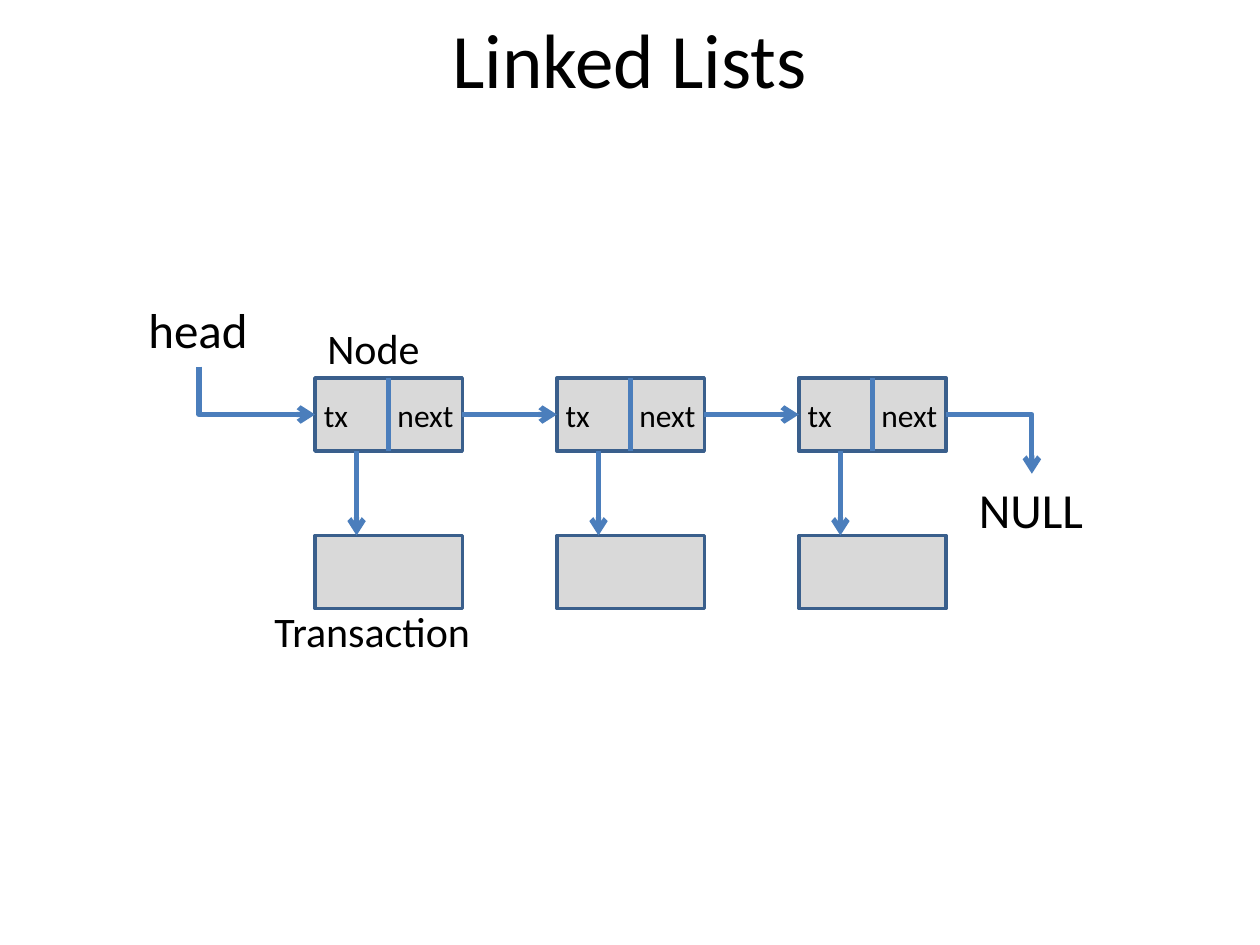
import pptx
import pptx.dml.color
import pptx.enum.shapes
import pptx.enum.text
import pptx.oxml.ns
import pptx.util
from lxml import etree

Inches = pptx.util.Inches
Anchor = pptx.enum.text.MSO_ANCHOR
Align = pptx.enum.text.PP_ALIGN
Connector = pptx.enum.shapes.MSO_CONNECTOR
qn = pptx.oxml.ns.qn

TOP, LEFT, BOTTOM, RIGHT = range(4)


def color(hex_string):
    return pptx.dml.color.RGBColor.from_string(hex_string)


def write(frame, text, size=24, align=Align.LEFT, anchor=Anchor.TOP, wrap=True, tab=None):
    """Put one formatted paragraph in the frame; tab is a stop in inches."""
    frame.word_wrap = wrap
    frame.vertical_anchor = anchor
    paragraph = frame.paragraphs[0]
    paragraph.alignment = align
    if tab:
        stops = etree.SubElement(paragraph._p.get_or_add_pPr(), qn("a:tabLst"))
        etree.SubElement(stops, qn("a:tab"), pos=str(Inches(tab)), algn="l")
    run = paragraph.add_run()
    run.text = text
    run.font.size = pptx.util.Pt(size)
    run.font.name = "Calibri"
    run.font.color.rgb = color("000000")


class Diagram:
    """Holds the style and the slide being drawn."""
    fill = "D9D9D9"
    border = "3A5F8C"
    link = "4B7EBC"

    def __init__(self, slide):
        self.slide = slide

    def title(self, text):
        heading = self.slide.shapes.title
        heading.left, heading.top = Inches(0), Inches(0)
        heading.width, heading.height = Inches(10), Inches(0.92)
        write(heading.text_frame, text, size=44, align=Align.CENTER, anchor=Anchor.MIDDLE)

    def label(self, text, left, top, width, height, size=24):
        box = self.slide.shapes.add_textbox(*map(Inches, (left, top, width, height)))
        box.text_frame.auto_size = pptx.enum.text.MSO_AUTO_SIZE.SHAPE_TO_FIT_TEXT
        write(box.text_frame, text, size=size, wrap=False)

    def box(self, left, top, width, height):
        rect = self.slide.shapes.add_shape(
            pptx.enum.shapes.MSO_SHAPE.RECTANGLE, *map(Inches, (left, top, width, height)))
        rect.shadow.inherit = False
        rect.fill.solid()
        rect.fill.fore_color.rgb = color(self.fill)
        rect.line.color.rgb = color(self.border)
        rect.line.width = pptx.util.Pt(2)
        return rect

    def node(self, left, top, width, height):
        rect = self.box(left, top, width, height)
        frame = rect.text_frame
        frame.margin_left = Inches(0.07)
        frame.margin_right = frame.margin_top = frame.margin_bottom = 0
        write(frame, "tx\tnext", size=18, anchor=Anchor.MIDDLE, tab=width / 2)
        return rect

    def line(self, x1, y1, x2, y2, arrow=True, kind=Connector.STRAIGHT):
        connector = self.slide.shapes.add_connector(kind, *map(Inches, (x1, y1, x2, y2)))
        connector.line.color.rgb = color(self.link)
        connector.line.width = pptx.util.Pt(3)
        if arrow:
            etree.SubElement(connector.line._get_or_add_ln(), qn("a:tailEnd"), type="arrow")
        etree.SubElement(connector._element.spPr, qn("a:effectLst"))
        return connector

    def join(self, start, start_side, end, end_side, arrow=True):
        connector = self.line(0, 0, 1, 1, arrow)
        connector.begin_connect(start, start_side)
        connector.end_connect(end, end_side)

    def corner(self, x1, y1, x2, y2, down_first=False):
        """Draw an arrow with a single right-angle bend."""
        if down_first:
            # A quarter turn swaps width and height about the same centre.
            cx, cy = (x1 + x2) / 2, (y1 + y2) / 2
            dx, dy = (y2 - y1) / 2, (x2 - x1) / 2
            x1, y1, x2, y2 = cx - dx, cy - dy, cx + dx, cy + dy
        connector = self.line(x1, y1, x2, y2, kind=Connector.ELBOW)
        properties = connector._element.spPr
        properties.find(qn("a:prstGeom")).set("prst", "bentConnector2")
        if down_first:
            frame = properties.find(qn("a:xfrm"))
            frame.set("rot", str(270 * 60000))
            frame.set("flipH", "1")


def main():
    deck = pptx.Presentation()
    deck.slide_width, deck.slide_height = Inches(10), Inches(7.5)
    diagram = Diagram(deck.slides.add_slide(deck.slide_layouts[5]))
    diagram.title("Linked Lists")

    width, height = 1.17, 0.58
    node_top, transaction_top = 3, 4.25
    lefts = [2.5 + 1.92 * i for i in range(3)]
    middle = node_top + height / 2

    nodes = [diagram.node(left, node_top, width, height) for left in lefts]
    for left, node in zip(lefts, nodes):
        diagram.join(node, TOP, node, BOTTOM, arrow=False)
        diagram.box(left, transaction_top, width, height)
        diagram.line(left + 0.33, node_top + height, left + 0.33, transaction_top)
    for node, following in zip(nodes, nodes[1:]):
        diagram.join(node, RIGHT, following, LEFT)

    diagram.corner(1.58, 2.91, lefts[0], middle, down_first=True)
    diagram.corner(lefts[-1] + width, middle, 8.19, 3.76)

    diagram.label("head", 1.08, 2.33, 1, 0.57, size=28)
    diagram.label("Node", 2.5, 2.51, 0.94, 0.5)
    diagram.label("Transaction", 2.08, 4.76, 1.77, 0.5)
    diagram.label("NULL", 7.67, 3.76, 1.04, 0.57, size=28)

    deck.save("out.pptx")


if __name__ == "__main__":
    main()
